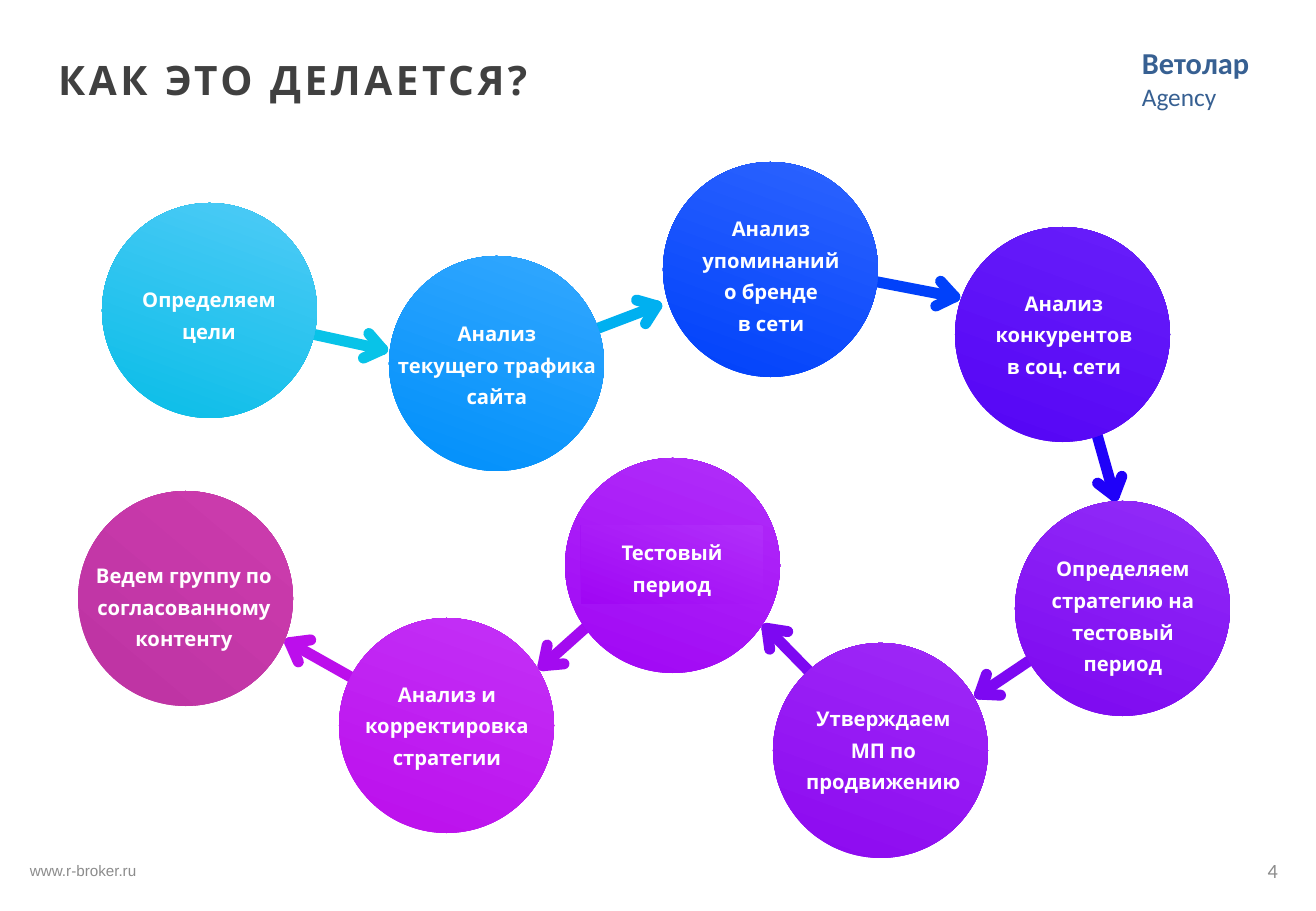
from math import cos, radians, sin

from pptx import Presentation
from pptx.dml.color import RGBColor
from pptx.enum.shapes import MSO_SHAPE
from pptx.enum.text import MSO_ANCHOR, MSO_AUTO_SIZE, PP_ALIGN
from pptx.util import Pt

PX = 7526  # EMU per px
SLIDE_SIZE = (1316, 911)

WHITE = RGBColor(0xFF, 0xFF, 0xFF)
DARK = RGBColor(0x40, 0x40, 0x40)
GREY = RGBColor(0x8C, 0x8C, 0x8C)
NAVY = RGBColor(0x37, 0x60, 0x92)
TURQUOISE = RGBColor(0x08, 0xC3, 0xE8)
SKY = RGBColor(0x00, 0xB0, 0xF0)
BLUE = RGBColor(0x00, 0x41, 0xFA)
INDIGO = RGBColor(0x1F, 0x01, 0xF9)
VIOLET = RGBColor(0x7D, 0x08, 0xF2)
PURPLE = RGBColor(0xA3, 0x0A, 0xF0)
MAGENTA = RGBColor(0xBC, 0x0E, 0xEC)

TITLE = "КАК ЭТО ДЕЛАЕТСЯ?"
TITLE_BOX = (46, 26, 919, 106)
WEBSITE = "www.r-broker.ru"
PAGE_NUMBER = "4"
AGENCY = ["Ветолар", "Agency"]

# Steps: circle corner, label box, lower and upper gradient colours, gradient angle, lines
DIAMETER = 215
STEPS = [
    ((102, 203), (107, 273, 204, 78), "09BDE7", "4FCBF7", 70, ["Определяем цели"]),
    ((389, 256), (379, 289, 236, 145), "008FFA", "33A8FF", 70,
     ["Анализ", "текущего трафика", "сайта"]),
    ((663, 162), (661, 204, 220, 137), "0041FA", "2D64FF", 70,
     ["Анализ", "упоминаний", "о бренде", "в сети"]),
    ((955, 227), (954, 275, 220, 112), "5505F5", "671EFA", 70,
     ["Анализ", "конкурентов", "в соц. сети"]),
    ((1015, 501), (1013, 541, 220, 143), "7D08F0", "922CF8", 70,
     ["Определяем", "стратегию на", "тестовый", "период"]),
    ((773, 643), (784, 696, 199, 101), "8C09F0", "9F29F7", 70,
     ["Утверждаем", "МП по продвижению"]),
    ((565, 458), (581, 526, 182, 78), "A006F4", "B12EFA", 70, ["Тестовый период"]),
    ((339, 618), (337, 666, 220, 112), "BC0EEC", "C331F7", 70,
     ["Анализ и", "корректировка", "стратегии"]),
    ((78, 491), (74, 553, 220, 101), "BD33A3", "CC3CAD", 50,
     ["Ведем группу по", "согласованному", "контенту"]),
]
FILLED_LABEL = 6  # this step's label has a gradient of its own

# Arrows: centre of the shaft, its length, clockwise angle, colour
ARROWS = [
    ((344, 341), 90, 12.3, TURQUOISE),
    ((625, 318), 79, 339.2, SKY),
    ((914, 289), 94, 10.9, BLUE),
    ((1103, 456), 94, 74.2, INDIGO),
    ((1014, 671), 94, 146.1, VIOLET),
    ((796, 658), 94, 225.6, VIOLET),
    ((574, 638), 94, 138.2, PURPLE),
    ((326, 663), 94, 209.4, MAGENTA),
]
BAR_THICKNESS = 11
HEAD_LENGTH = 32
HEAD_SPREAD = 36.8


def emu(lengths):
    return [round(length * PX) for length in lengths]


def add_text(slide, box, lines, font_name, size, color, align=PP_ALIGN.LEFT,
             bold=False, spacing=None, wrap=True):
    shape = slide.shapes.add_textbox(*emu(box))
    frame = shape.text_frame
    frame.word_wrap = wrap
    frame.vertical_anchor = MSO_ANCHOR.MIDDLE
    frame.text = "\n".join(lines)
    for paragraph in frame.paragraphs:
        paragraph.alignment = align
        paragraph.line_spacing = spacing
        paragraph.font.name = font_name
        paragraph.font.size = Pt(size)
        paragraph.font.bold = bold
        paragraph.font.color.rgb = color
    return shape


def fill_gradient(shape, lower, upper, angle):
    shape.fill.gradient()
    shape.fill.gradient_angle = angle
    for stop, color in zip(shape.fill.gradient_stops, (lower, upper)):
        stop.color.rgb = RGBColor.from_string(color)


def add_bar(group, center, length, angle, color):
    left, top = center[0] - length / 2, center[1] - BAR_THICKNESS / 2
    bar = group.shapes.add_shape(MSO_SHAPE.ROUNDED_RECTANGLE,
                                 *emu((left, top, length, BAR_THICKNESS)))
    bar.adjustments[0] = 0.5
    bar.rotation = angle % 360
    bar.shadow.inherit = False
    bar.fill.solid()
    bar.fill.fore_color.rgb = color
    bar.line.fill.background()


def shift(point, distance, angle):
    return (point[0] + distance * cos(radians(angle)),
            point[1] + distance * sin(radians(angle)))


def add_arrow(slide, center, length, angle, color):
    """Three rounded bars whose front end caps share one centre."""
    group = slide.shapes.add_group_shape()
    add_bar(group, center, length, angle, color)
    tip = shift(center, (length - BAR_THICKNESS) / 2, angle)
    for head_angle in (angle + HEAD_SPREAD, angle - HEAD_SPREAD):
        head_center = shift(tip, -(HEAD_LENGTH - BAR_THICKNESS) / 2, head_angle)
        add_bar(group, head_center, HEAD_LENGTH, head_angle, color)


def main():
    presentation = Presentation()
    presentation.slide_width, presentation.slide_height = emu(SLIDE_SIZE)
    slide = presentation.slides.add_slide(presentation.slide_layouts[5])

    # Title
    title = slide.shapes.title
    title.left, title.top, title.width, title.height = emu(TITLE_BOX)
    frame = title.text_frame
    frame.text = TITLE
    frame.auto_size = MSO_AUTO_SIZE.NONE
    frame.vertical_anchor = MSO_ANCHOR.MIDDLE
    paragraph = frame.paragraphs[0]
    paragraph.alignment = PP_ALIGN.LEFT
    paragraph.font.name = "Open Sans"
    paragraph.font.size = Pt(24)
    paragraph.font.bold = True
    paragraph.font.color.rgb = DARK
    paragraph.runs[0].font._element.set("spc", "210")

    # Agency name, website and page number
    agency = add_text(slide, (1130, 38, 147, 80), AGENCY, "Calibri", 15, NAVY, wrap=False)
    name = agency.text_frame.paragraphs[0]
    name.font.size = Pt(18)
    name.font.bold = True
    add_text(slide, (18, 847, 228, 47), [WEBSITE], "Arial", 9, GREY)
    add_text(slide, (983, 846, 307, 49), [PAGE_NUMBER], "Calibri", 12, GREY, PP_ALIGN.RIGHT)

    # Arrows lie behind the circles
    for arrow in ARROWS:
        add_arrow(slide, *arrow)

    # Circles with labels
    for index, (corner, box, lower, upper, angle, lines) in enumerate(STEPS):
        circle = slide.shapes.add_shape(MSO_SHAPE.OVAL, *emu((*corner, DIAMETER, DIAMETER)))
        circle.shadow.inherit = False
        circle.line.fill.background()
        fill_gradient(circle, lower, upper, angle)
        label = add_text(slide, box, lines, "Open Sans", 12, WHITE, PP_ALIGN.CENTER,
                         bold=True, spacing=1.3)
        if index == FILLED_LABEL:
            fill_gradient(label, lower, upper, angle)

    presentation.save("out.pptx")


if __name__ == "__main__":
    main()
